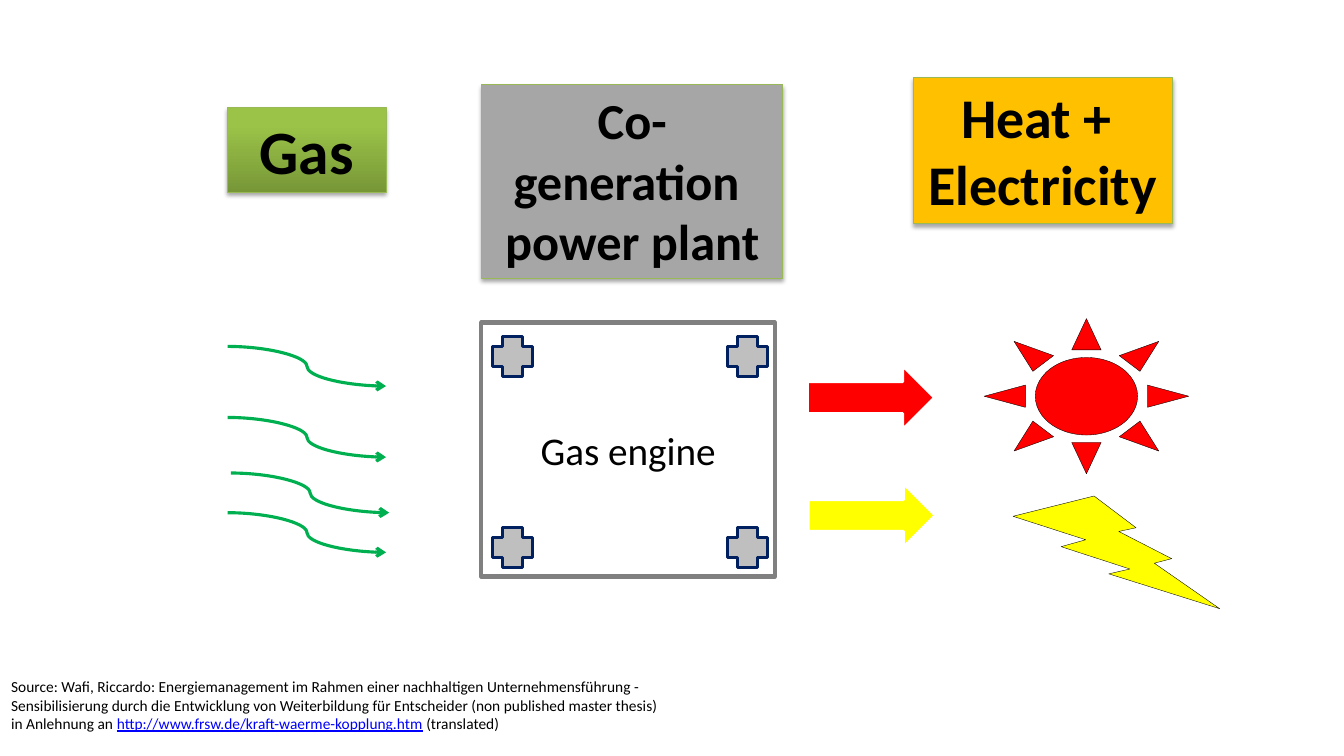
"""Builds a slide on turning gas into heat and electricity by co-generation."""
from itertools import product

from lxml import etree
from pptx import Presentation
from pptx.dml.color import RGBColor
from pptx.enum.shapes import MSO_CONNECTOR, MSO_SHAPE
from pptx.enum.text import MSO_ANCHOR, PP_ALIGN
from pptx.oxml.ns import qn
from pptx.util import Cm, Pt

RECTANGLE = MSO_SHAPE.RECTANGLE
CROSS = MSO_SHAPE.CROSS
RIGHT_ARROW = MSO_SHAPE.RIGHT_ARROW
SUN = MSO_SHAPE.SUN
LIGHTNING = MSO_SHAPE.LIGHTNING_BOLT
CURVE = MSO_CONNECTOR.CURVE
CENTER = PP_ALIGN.CENTER
LEFT = PP_ALIGN.LEFT
MIDDLE = MSO_ANCHOR.MIDDLE
TOP = MSO_ANCHOR.TOP

BLACK = RGBColor(0x00, 0x00, 0x00)
WHITE = RGBColor(0xFF, 0xFF, 0xFF)
RED = RGBColor(0xFF, 0x00, 0x00)
YELLOW = RGBColor(0xFF, 0xFF, 0x00)
AMBER = RGBColor(0xFF, 0xC0, 0x00)
FLOW_GREEN = RGBColor(0x00, 0xB0, 0x50)
EDGE_GREEN = RGBColor(0x98, 0xB9, 0x55)
DARK_GREEN = RGBColor(0x77, 0x97, 0x37)
LIGHT_GREEN = RGBColor(0x9B, 0xC3, 0x48)
FRAME_GRAY = RGBColor(0x80, 0x80, 0x80)
PLANT_GRAY = RGBColor(0xA6, 0xA6, 0xA6)
BOLT_GRAY = RGBColor(0xBF, 0xBF, 0xBF)
NAVY = RGBColor(0x00, 0x20, 0x60)
LINK_BLUE = RGBColor(0x00, 0x00, 0xFF)

FONT = "Calibri"
SOURCE_BEFORE = (
    "Source: Wafi, Riccardo: Energiemanagement im Rahmen einer nachhaltigen "
    "Unternehmensführung - Sensibilisierung durch die Entwicklung von "
    "Weiterbildung für Entscheider (non published master thesis) "
    "in Anlehnung an "
)
SOURCE_ADDRESS = "http://www.frsw.de/kraft-waerme-kopplung.htm"


def write(frame, text, size, color=BLACK, bold=False, underline=False,
          align=LEFT, anchor=TOP):
    """Append text to the frame's first paragraph; a newline breaks the line."""
    frame.word_wrap = True
    frame.vertical_anchor = anchor
    paragraph = frame.paragraphs[0]
    paragraph.alignment = align
    for index, line in enumerate(text.split("\n")):
        if index:
            paragraph.add_line_break()
        run = paragraph.add_run()
        run.text = line
        run.font.name = FONT
        run.font.size = Pt(size)
        run.font.bold = bold
        run.font.underline = underline
        run.font.color.rgb = color


def add_figure(slide, kind, box, fill, edge, edge_width):
    """Add a preset shape at a box in centimetres, without shadow."""
    figure = slide.shapes.add_shape(kind, *map(Cm, box))
    figure.shadow.inherit = False
    if fill is None:
        figure.fill.background()
    else:
        figure.fill.solid()
        figure.fill.fore_color.rgb = fill
    figure.line.color.rgb = edge
    figure.line.width = Pt(edge_width)
    return figure


def add_header(slide, text, box, size, fill):
    """Add a bold header box with a soft shadow below it."""
    header = add_figure(slide, RECTANGLE, box, fill, EDGE_GREEN, 0.75)
    effects = header._element.spPr.find(qn("a:effectLst"))
    shadow = etree.SubElement(effects, qn("a:outerShdw"), blurRad="40000",
                              dist="23000", dir="5400000", rotWithShape="0")
    tint = etree.SubElement(shadow, qn("a:srgbClr"), val=str(BLACK))
    etree.SubElement(tint, qn("a:alpha"), val="35000")
    write(header.text_frame, text, size, bold=True, align=CENTER)
    return header


def shade_green(header):
    """Fill a header with a green gradient that lightens upwards."""
    header.fill.gradient()
    header.fill.gradient_angle = 90
    shades = ((0, DARK_GREEN), (0.8, LIGHT_GREEN))
    for stop, (position, color) in zip(header.fill.gradient_stops, shades):
        stop.position = position
        stop.color.rgb = color


def add_gas_flow(slide, left, top):
    """Add a curved green arrow that falls by one centimetre."""
    flow = slide.shapes.add_connector(
        CURVE, Cm(left), Cm(top), Cm(left + 3.99), Cm(top + 1))
    flow.line.color.rgb = FLOW_GREEN
    flow.line.width = Pt(2.25)
    etree.SubElement(flow.line._get_or_add_ln(), qn("a:tailEnd"), type="arrow")
    etree.SubElement(flow._element.spPr, qn("a:effectLst"))


def add_engine(slide):
    """Add the gas engine with a bolt in each corner."""
    engine = add_figure(slide, RECTANGLE, (12.13, 8.13, 7.4, 6.4),
                        None, FRAME_GRAY, 3)
    write(engine.text_frame, "Gas engine", 28, align=CENTER, anchor=MIDDLE)
    for left, top in product((12.42, 18.34), (8.48, 13.3)):
        add_figure(slide, CROSS, (left, top, 1, 1), BOLT_GRAY, NAVY, 2.25)


def add_source(slide):
    """Add the source note at the bottom left."""
    note = slide.shapes.add_textbox(Cm(0.03), Cm(16.94), Cm(16.94), Cm(1.68))
    write(note.text_frame, SOURCE_BEFORE, 11)
    write(note.text_frame, SOURCE_ADDRESS, 11, color=LINK_BLUE, underline=True)
    write(note.text_frame, " (translated)", 11)


def main():
    """Build and save the slide."""
    deck = Presentation()
    deck.slide_width, deck.slide_height = Cm(33.87), Cm(19.05)
    slide = deck.slides.add_slide(deck.slide_layouts[6])

    for left, top in ((5.74, 8.73), (5.74, 10.52), (5.82, 11.92), (5.74, 12.92)):
        add_gas_flow(slide, left, top)
    add_engine(slide)
    add_figure(slide, RIGHT_ARROW, (20.35, 9.22, 3.2, 1.6), RED, WHITE, 2)
    add_figure(slide, RIGHT_ARROW, (20.37, 12.19, 3.2, 1.6), YELLOW, WHITE, 2)
    add_figure(slide, LIGHTNING, (25.53, 12.5, 5.21, 2.84), YELLOW, BLACK, 0.25)
    add_figure(slide, SUN, (24.8, 8.03, 5.16, 3.91), RED, BLACK, 0.25)

    gas = add_header(slide, "Gas", (5.74, 2.72, 3.99, 2.13), 44, LIGHT_GREEN)
    shade_green(gas)
    add_header(slide, "Co-generation \npower plant",
               (12.14, 2.13, 7.59, 4.88), 36, PLANT_GRAY)
    add_header(slide, "Heat + \nElectricity",
               (23.01, 1.96, 6.53, 3.68), 40, AMBER)
    add_source(slide)
    deck.save("out.pptx")


if __name__ == "__main__":
    main()
